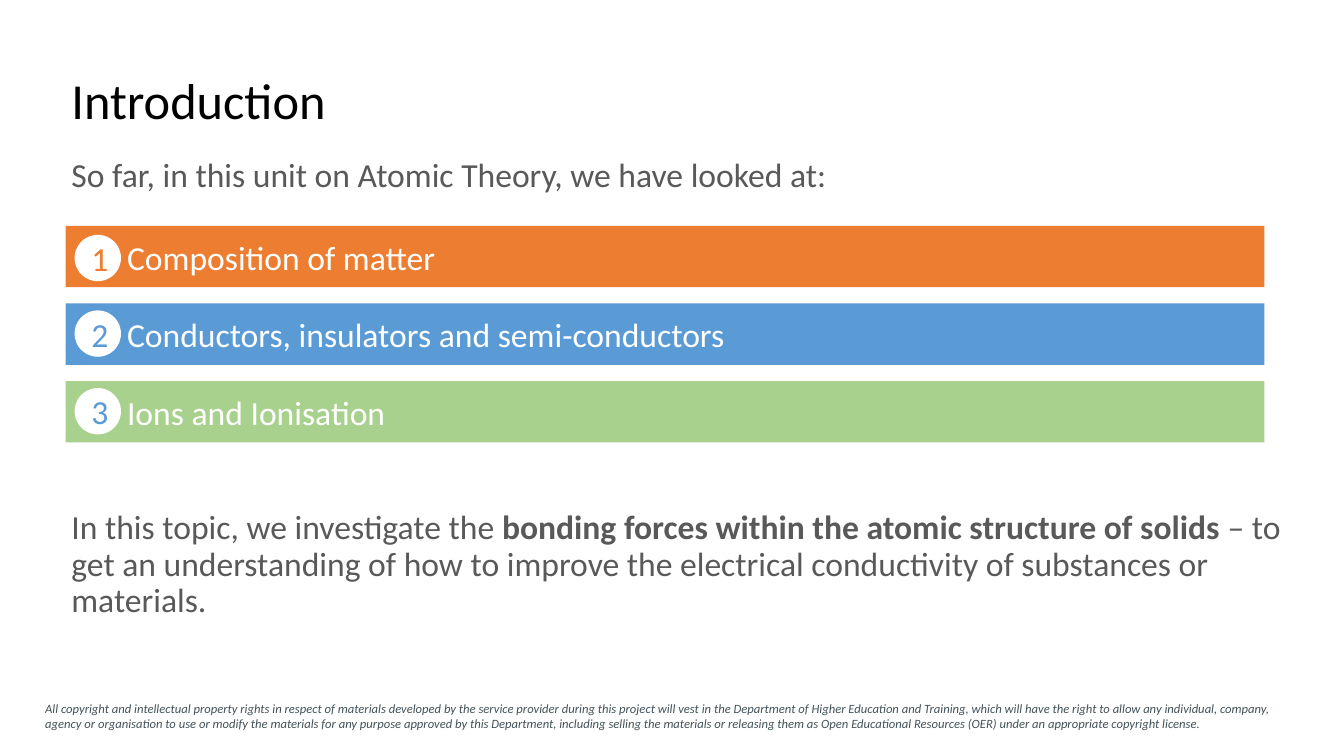
"""Build the Introduction slide on atomic theory."""
from dataclasses import dataclass
from typing import Any

from pptx import Presentation
from pptx.dml.color import RGBColor
from pptx.enum.shapes import MSO_SHAPE
from pptx.enum.text import MSO_ANCHOR, PP_ALIGN
from pptx.util import Emu, Pt

RECTANGLE, OVAL = MSO_SHAPE.RECTANGLE, MSO_SHAPE.OVAL
TOP, MIDDLE, BOTTOM = MSO_ANCHOR.TOP, MSO_ANCHOR.MIDDLE, MSO_ANCHOR.BOTTOM
LEFT, CENTER = PP_ALIGN.LEFT, PP_ALIGN.CENTER
EMU_PER_PX = 9144


@dataclass(frozen=True)
class Theme:
    """Font, colours and type sizes of the slide."""
    font: str = "Calibri"
    black: str = "000000"
    gray: str = "595959"
    slate: str = "43525A"
    white: str = "FFFFFF"
    orange: str = "ED7D31"
    blue: str = "5B9BD5"
    green: str = "A9D18E"
    title: int = 36
    body: int = 24
    footer: int = 9


@dataclass(frozen=True)
class Area:
    """A rectangle on the slide, in px."""
    left: int
    top: int
    width: int
    height: int


@dataclass(frozen=True)
class Topic:
    """One numbered bar of the list."""
    label: str
    bar_color: str
    number_color: str
    badge_top: int


THEME = Theme()
BAR = Area(65, 224, 1189, 61)
BAR_PITCH = 77
BAR_INSET = 61
BADGE_LEFT, BADGE_SIZE = 74, 46
TOPICS = (
    Topic("Composition of matter", THEME.orange, THEME.orange, 233),
    Topic("Conductors, insulators and semi-conductors", THEME.blue, THEME.blue, 308),
    Topic("Ions and Ionisation", THEME.green, THEME.blue, 385),
)
FOOTER = (
    "All copyright and intellectual property rights in respect of materials developed "
    "by the service provider during this project will vest in the Department of Higher "
    "Education and Training, which will have the right to allow any individual, company, "
    "agency or organisation to use or modify the materials for any purpose approved by "
    "this Department, including selling the materials or releasing them as Open "
    "Educational Resources (OER) under an appropriate copyright license."
)


def px(length: int) -> Emu:
    """Turn px into EMU."""
    return Emu(length * EMU_PER_PX)


def place(area: Area) -> tuple[Emu, Emu, Emu, Emu]:
    """Give the position and size of an area in EMU."""
    return px(area.left), px(area.top), px(area.width), px(area.height)


def write(shape: Any, *texts: str, size: int = THEME.body, color: str = THEME.gray,
          bold_text: str = "", italic: bool = False, align: PP_ALIGN = LEFT,
          anchor: MSO_ANCHOR = TOP, spacing: float = 1.0) -> None:
    """Write one paragraph of spans into a shape."""
    frame = shape.text_frame
    frame.word_wrap = True
    frame.vertical_anchor = anchor
    para = frame.paragraphs[0]
    para.alignment = align
    para.line_spacing = spacing
    for text in texts:
        span = para.add_run()
        span.text = text
        span.font.name = THEME.font
        span.font.size = Pt(size)
        span.font.bold = text == bold_text
        span.font.italic = italic
        span.font.color.rgb = RGBColor.from_string(color)


def add_text(page: Any, area: Area, *texts: str, **style: Any) -> None:
    """Add a text box."""
    write(page.shapes.add_textbox(*place(area)), *texts, **style)


def add_filled(page: Any, kind: MSO_SHAPE, area: Area, fill: str) -> Any:
    """Add a flat shape without an outline."""
    shape = page.shapes.add_shape(kind, *place(area))
    shape.shadow.inherit = False
    shape.fill.solid()
    shape.fill.fore_color.rgb = RGBColor.from_string(fill)
    shape.line.fill.background()
    return shape


def add_topic(page: Any, index: int, topic: Topic) -> None:
    """Add a bar with its numbered badge."""
    area = Area(BAR.left, BAR.top + index * BAR_PITCH, BAR.width, BAR.height)
    bar = add_filled(page, RECTANGLE, area, topic.bar_color)
    bar.text_frame.margin_left = px(BAR_INSET)
    write(bar, topic.label, color=THEME.white, anchor=MIDDLE)
    spot = Area(BADGE_LEFT, topic.badge_top, BADGE_SIZE, BADGE_SIZE)
    badge = add_filled(page, OVAL, spot, THEME.white)
    write(badge, str(index + 1), color=topic.number_color, align=CENTER, anchor=MIDDLE)


def main() -> None:
    """Build and save the deck."""
    deck = Presentation()
    deck.slide_width, deck.slide_height = px(1333), px(750)
    page = deck.slides.add_slide(deck.slide_layouts[6])
    add_text(page, Area(35, 690, 1262, 40), FOOTER,
             size=THEME.footer, color=THEME.slate, italic=True)
    add_text(page, Area(61, 29, 833, 105), "Introduction",
             size=THEME.title, color=THEME.black, anchor=BOTTOM, spacing=0.9)
    add_text(page, Area(61, 152, 1252, 50),
             "So far, in this unit on Atomic Theory, we have looked at:", spacing=0.9)
    for index, topic in enumerate(TOPICS):
        add_topic(page, index, topic)
    key_phrase = "bonding forces within the atomic structure of solids "
    add_text(page, Area(61, 502, 1252, 120), "In this topic, we investigate the ", key_phrase,
             "– to get an understanding of how to improve the electrical conductivity "
             "of substances or materials.", bold_text=key_phrase, spacing=0.9)
    deck.save("out.pptx")


if __name__ == "__main__":
    main()
